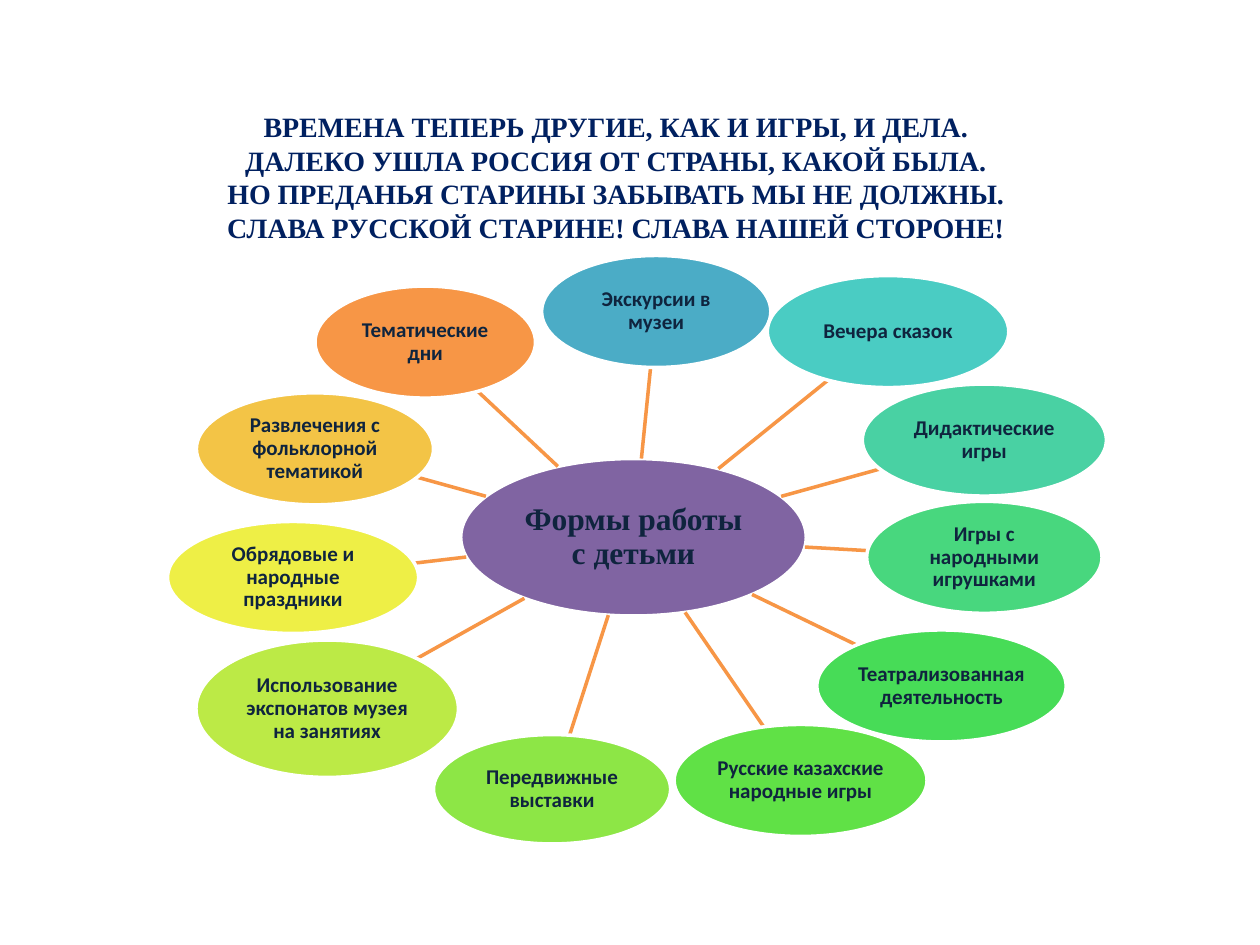
import math

import lxml.etree
import pptx
import pptx.dml.color
import pptx.enum.shapes
import pptx.enum.text
import pptx.oxml.ns
import pptx.util

Pt = pptx.util.Pt

COLORS = {
    "title": "002060", "label": "0F243E", "spoke": "F79646", "edge": "FFFFFF",
    "hub": "8064A2",
}
POEM = "\v".join([
    "ВРЕМЕНА ТЕПЕРЬ ДРУГИЕ, КАК И ИГРЫ, И ДЕЛА.",
    "ДАЛЕКО УШЛА РОССИЯ ОТ СТРАНЫ, КАКОЙ БЫЛА.",
    "НО ПРЕДАНЬЯ СТАРИНЫ ЗАБЫВАТЬ МЫ НЕ ДОЛЖНЫ.",
    "СЛАВА РУССКОЙ СТАРИНЕ! СЛАВА НАШЕЙ СТОРОНЕ!",
])
# Ovals: centre x, centre y, width, height
HUB = (362, 307, 197.5, 90)
ACTIVITIES = [
    ("Экскурсии в музеи", "4BACC6", (375, 178, 131, 64)),
    ("Вечера сказок", "4ACCC3", (507.5, 189.5, 138, 64)),
    ("Дидактические игры", "49D1A3", (562.5, 251.5, 139.5, 64)),
    ("Игры с народными игрушками", "48D77E", (562.5, 318.5, 134.5, 64)),
    ("Театрализованная деятельность", "47DC57", (538, 392, 142.5, 64)),
    ("Русские казахские народные игры", "60E146", (457.5, 446, 144.5, 64)),
    ("Передвижные выставки", "8DE646", (315.5, 451, 135.5, 62.5)),
    ("Использование экспонатов музея на занятиях", "BCEA46", (187, 405, 150, 78.5)),
    ("Обрядовые и народные праздники", "EEEF46", (167.5, 330, 143.5, 64)),
    ("Развлечения с фольклорной тематикой", "F3C446", (180, 256.5, 135.5, 64)),
    ("Тематические дни", "F79646", (243, 195.5, 126, 64)),
]


def rgb(value):
    return pptx.dml.color.RGBColor.from_string(value)


def edge_point(oval, target):
    """Point where the line from the oval's centre to the target's centre leaves the oval."""
    x, y, width, height = oval
    dx, dy = target[0] - x, target[1] - y
    reach = 1 / math.hypot(dx / (width / 2), dy / (height / 2))
    return x + dx * reach, y + dy * reach


class Diagram:
    LINE_WIDTH = 2
    FRAME = {
        "word_wrap": True,
        "auto_size": pptx.enum.text.MSO_AUTO_SIZE.NONE,
        "vertical_anchor": pptx.enum.text.MSO_ANCHOR.MIDDLE,
    }
    INSETS = {f"margin_{side}": Pt(0.9) for side in ("left", "top", "right", "bottom")}

    def __init__(self, slide):
        self.slide = slide

    def apply(self, target, values):
        for name, value in values.items():
            setattr(target, name, value)

    def label(self, frame, text, font, size, color, spacing=1.0):
        self.apply(frame, self.FRAME)
        frame.text = text
        paragraph = frame.paragraphs[0]
        self.apply(paragraph, {
            "alignment": pptx.enum.text.PP_ALIGN.CENTER, "line_spacing": spacing,
        })
        for run in paragraph.runs:
            self.apply(run.font, {"name": font, "size": Pt(size), "bold": True})
            run.font.color.rgb = rgb(color)

    def title(self, text, left, top, width, height):
        heading = self.slide.shapes.title
        self.apply(heading, {
            "left": Pt(left), "top": Pt(top), "width": Pt(width), "height": Pt(height),
        })
        self.label(heading.text_frame, text, "Times New Roman", 16, COLORS["title"])

    def stroke(self, line, color):
        line.color.rgb = rgb(color)
        line.width = Pt(self.LINE_WIDTH)

    def oval(self, text, fill, bounds, font="Calibri", size=12):
        x, y, width, height = bounds
        bubble = self.slide.shapes.add_shape(
            pptx.enum.shapes.MSO_SHAPE.OVAL,
            Pt(x - width / 2), Pt(y - height / 2), Pt(width), Pt(height))
        bubble.shadow.inherit = False
        bubble.fill.solid()
        bubble.fill.fore_color.rgb = rgb(fill)
        self.stroke(bubble.line, COLORS["edge"])
        self.apply(bubble.text_frame, self.INSETS)
        self.label(bubble.text_frame, text, font, size, COLORS["label"], 0.9)

    def spoke(self, start, end):
        ends = (*edge_point(start, end), *edge_point(end, start))
        connector = self.slide.shapes.add_connector(
            pptx.enum.shapes.MSO_CONNECTOR.STRAIGHT, *map(Pt, ends))
        self.stroke(connector.line, COLORS["spoke"])
        lxml.etree.SubElement(
            connector._element.spPr, pptx.oxml.ns.qn("a:effectLst"))


def main():
    deck = pptx.Presentation()
    deck.slide_width, deck.slide_height = Pt(720), Pt(540)
    title_only = deck.slide_layouts[5]
    diagram = Diagram(deck.slides.add_slide(title_only))

    diagram.title(POEM, 28, 56, 648, 90)
    diagram.oval("Формы работы\vс детьми", COLORS["hub"], HUB, "Times New Roman", 18)
    for activity, fill, bounds in ACTIVITIES:
        diagram.spoke(HUB, bounds)
        diagram.oval(activity, fill, bounds)

    deck.save("out.pptx")


if __name__ == "__main__":
    main()
